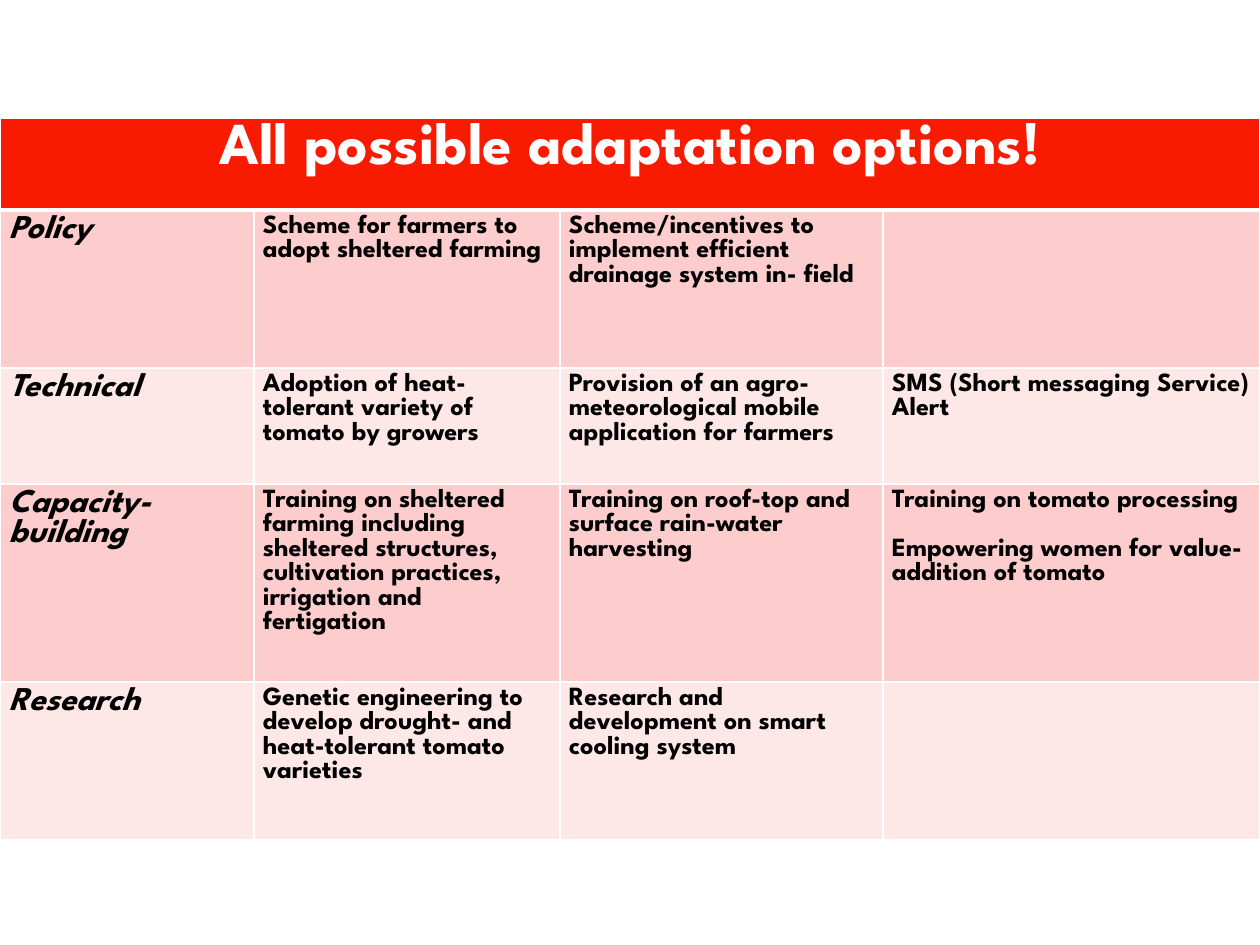
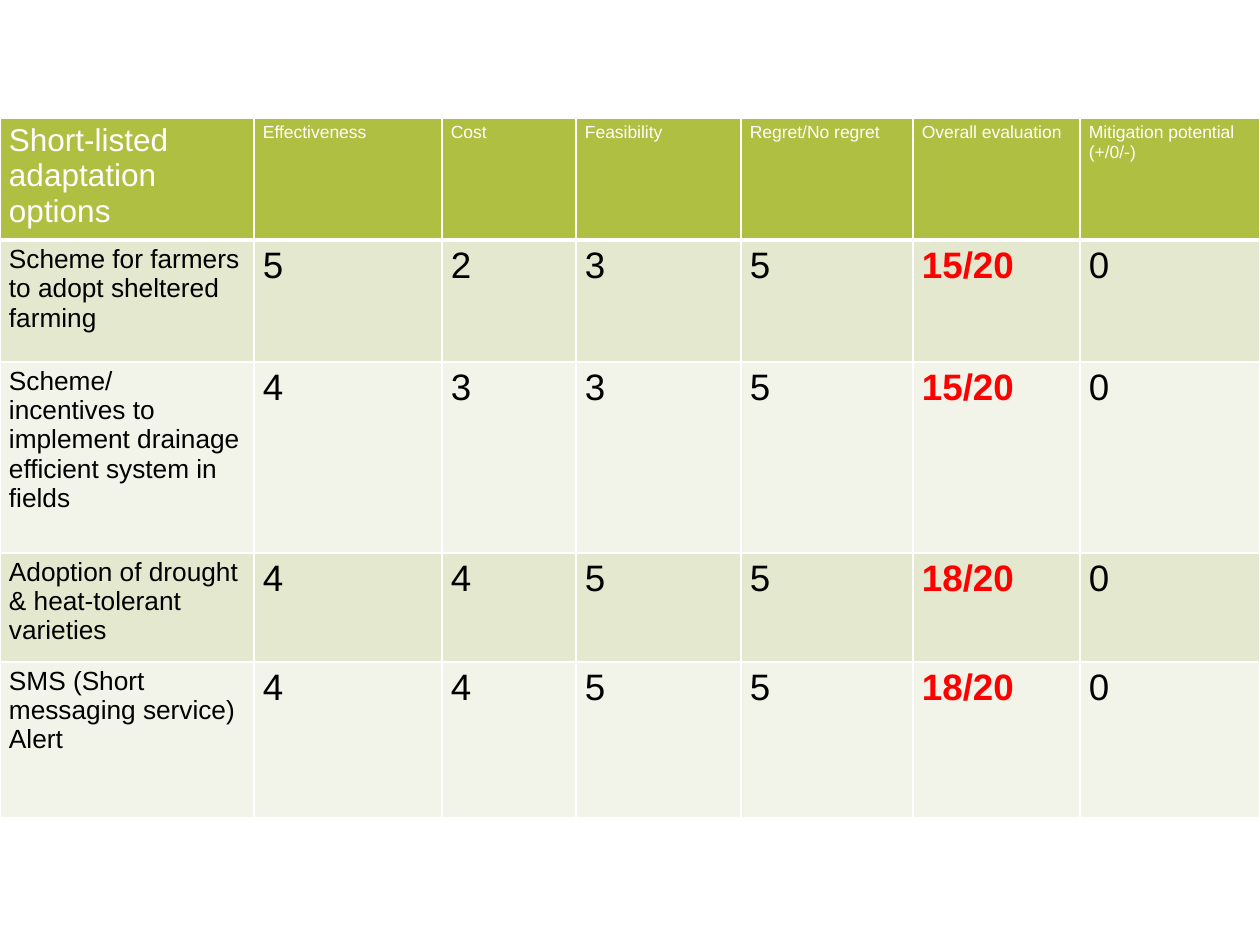
from dataclasses import dataclass

from lxml.etree import SubElement
from pptx import Presentation
from pptx.dml.color import RGBColor
from pptx.enum.text import PP_ALIGN
from pptx.oxml.ns import qn
from pptx.util import Emu, Pt

SCALE = 914400 / 126
PAGE_WIDTH, PAGE_HEIGHT = 1260, 945
TABLE_TOP = 118
INSET_X, INSET_Y = 9, 5
THIN, THICK = 1, 3

WHITE = RGBColor(0xFF, 0xFF, 0xFF)
BLACK = RGBColor(0x00, 0x00, 0x00)
SCORE_RED = RGBColor(0xFF, 0x00, 0x00)
RED_HEADER = RGBColor(0xF8, 0x1B, 0x02)
RED_BANDS = RGBColor(0xFC, 0xCD, 0xCC), RGBColor(0xFE, 0xE8, 0xE7)
GREEN_HEADER = RGBColor(0xAF, 0xBF, 0x41)
GREEN_BANDS = RGBColor(0xE3, 0xE8, 0xCF), RGBColor(0xF2, 0xF4, 0xE9)


@dataclass
class TextStyle:
    font: str
    size: int
    color: RGBColor = BLACK
    bold: bool = False
    italic: bool = False
    align: PP_ALIGN = PP_ALIGN.LEFT
    gap: int = 0


SPARTAN, ARIAL = "League Spartan", "Arial"
TITLE = TextStyle(SPARTAN, 34, WHITE, bold=True, align=PP_ALIGN.CENTER)
CATEGORY = TextStyle(SPARTAN, 19, bold=True, italic=True)
OPTION = TextStyle(SPARTAN, 15, bold=True, gap=14)
MAIN_HEADING = TextStyle(ARIAL, 18, WHITE)
CRITERION = TextStyle(ARIAL, 10, WHITE)
SHORT_LISTED = TextStyle(ARIAL, 15)
SCORE = TextStyle(ARIAL, 21)
TOTAL = TextStyle(ARIAL, 21, SCORE_RED, bold=True)

OPTION_COLUMNS = [254, 306, 323, 377]
OPTION_ROWS = [92, 158, 116, 198, 158]
OPTIONS = [
    ["All possible adaptation options!", "", "", ""],
    ["Policy", "Scheme for farmers to adopt sheltered farming",
     "Scheme/incentives to implement efficient drainage system in- field", ""],
    ["Technical", "Adoption of heat-tolerant variety of tomato by growers",
     "Provision of an agro-meteorological mobile application for farmers",
     "SMS (Short messaging Service) Alert"],
    ["Capacity-building",
     "Training on sheltered farming including sheltered structures, "
     "cultivation practices, irrigation and fertigation",
     "Training on roof-top and surface rain-water harvesting",
     "Training on tomato processing\nEmpowering women for value-addition of tomato"],
    ["Research",
     "Genetic engineering to develop drought- and heat-tolerant tomato varieties",
     "Research and development on smart cooling system", ""],
]

EVALUATION_COLUMNS = [254, 188, 134, 165, 172, 167, 180]
EVALUATION_ROWS = [122, 122, 191, 109, 156]
EVALUATIONS = [
    ["Short-listed adaptation options", "Effectiveness", "Cost", "Feasibility",
     "Regret/No regret", "Overall evaluation", "Mitigation potential (+/0/-)"],
    ["Scheme for farmers to adopt sheltered farming",
     "5", "2", "3", "5", "15/20", "0"],
    ["Scheme/\nincentives to implement drainage efficient system in fields",
     "4", "3", "3", "5", "15/20", "0"],
    ["Adoption of drought & heat-tolerant varieties",
     "4", "4", "5", "5", "18/20", "0"],
    ["SMS (Short messaging service) Alert",
     "4", "4", "5", "5", "18/20", "0"],
]


def px(length):
    return Emu(round(length * SCALE))


def write_text(cell, text, style):
    for index, line in enumerate(text.split("\n")):
        frame = cell.text_frame
        paragraph = frame.add_paragraph() if index else frame.paragraphs[0]
        paragraph.alignment = style.align
        if index:
            paragraph.space_before = Pt(style.gap)
        span = paragraph.add_run()
        span.text = line
        font = span.font
        font.name, font.size = style.font, Pt(style.size)
        font.bold, font.italic = style.bold, style.italic
        font.color.rgb = style.color


def draw_borders(cell, top, bottom):
    properties = cell._tc.get_or_add_tcPr()
    for side, width in (("L", THIN), ("R", THIN), ("T", top), ("B", bottom)):
        line = SubElement(properties, qn(f"a:ln{side}"), w=str(Pt(width)))
        fill = SubElement(line, qn("a:solidFill"))
        SubElement(fill, qn("a:srgbClr"), val=str(WHITE))


def format_cell(cell, color, row):
    cell.margin_left = cell.margin_right = px(INSET_X)
    cell.margin_top = cell.margin_bottom = px(INSET_Y)
    draw_borders(cell, THICK if row == 1 else THIN, THICK if row == 0 else THIN)
    cell.fill.solid()
    cell.fill.fore_color.rgb = color


def add_banded_table(page, content, columns, rows, header, bands, choose_style):
    frame = page.shapes.add_table(
        len(rows), len(columns), 0, px(TABLE_TOP), px(sum(columns)), px(sum(rows)))
    table = frame.table
    table.first_row = table.horz_banding = False
    for column, width in zip(table.columns, columns):
        column.width = px(width)
    for row, height in zip(table.rows, rows):
        row.height = px(height)
    for row, texts in enumerate(content):
        color = bands[(row - 1) % 2] if row else header
        for column, text in enumerate(texts):
            cell = table.cell(row, column)
            format_cell(cell, color, row)
            if text:
                write_text(cell, text, choose_style(row, column))
    return table


def option_style(row, column):
    if row == 0:
        return TITLE
    return OPTION if column else CATEGORY


def evaluation_style(row, column):
    if row == 0:
        return CRITERION if column else MAIN_HEADING
    return {0: SHORT_LISTED, 5: TOTAL}.get(column, SCORE)


def add_page(deck):
    return deck.slides.add_slide(deck.slide_layouts[6])


def main():
    deck = Presentation()
    deck.slide_width, deck.slide_height = px(PAGE_WIDTH), px(PAGE_HEIGHT)
    options = add_banded_table(add_page(deck), OPTIONS, OPTION_COLUMNS, OPTION_ROWS,
                               RED_HEADER, RED_BANDS, option_style)
    options.cell(0, 0).merge(options.cell(0, len(OPTION_COLUMNS) - 1))
    add_banded_table(add_page(deck), EVALUATIONS, EVALUATION_COLUMNS, EVALUATION_ROWS,
                     GREEN_HEADER, GREEN_BANDS, evaluation_style)
    deck.save("out.pptx")


if __name__ == "__main__":
    main()
